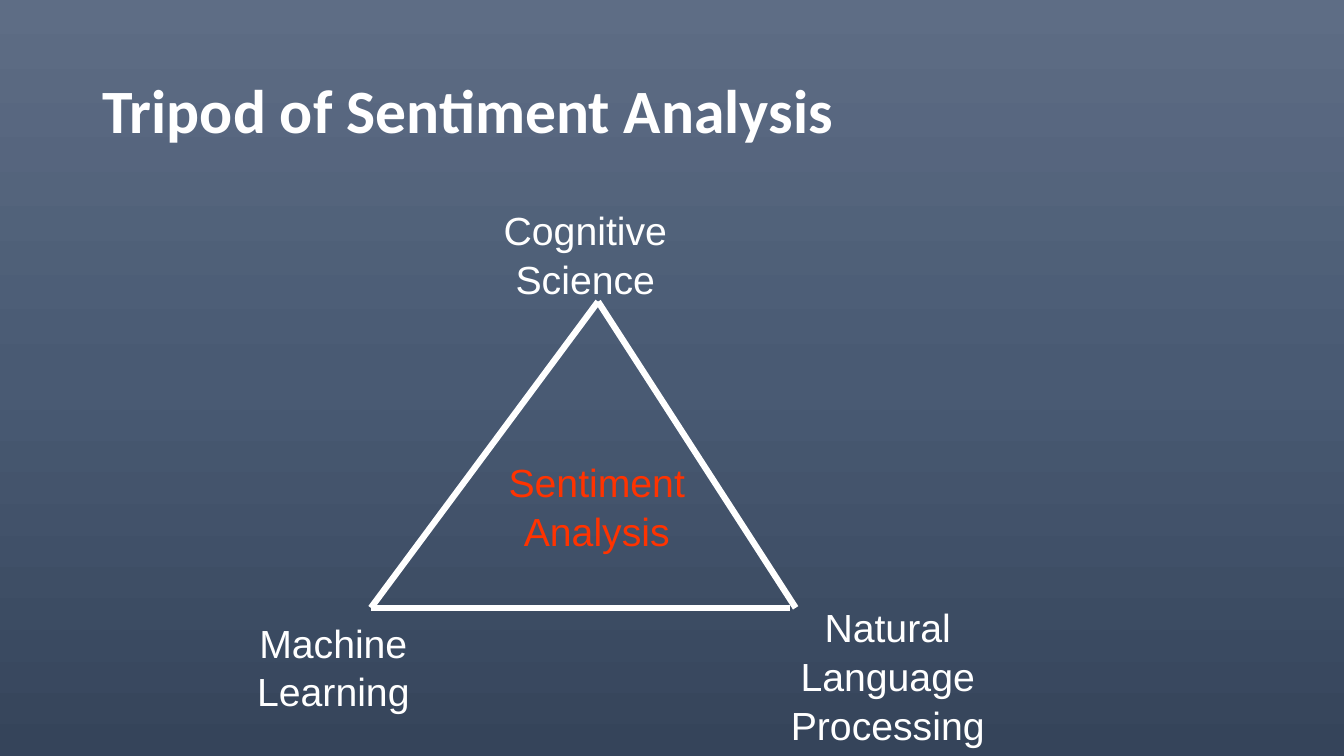
from copy import deepcopy

from pptx import Presentation
from pptx.dml.color import RGBColor
from pptx.enum.shapes import MSO_CONNECTOR
from pptx.enum.text import MSO_ANCHOR, PP_ALIGN
from pptx.oxml.ns import qn
from pptx.util import Inches, Pt
from lxml.etree import SubElement

WIDTH, HEIGHT = 13.33, 7.5
WHITE, RED = "FFFFFF", "FF3300"
BACKGROUND = [(0, "5E6D85"), (0.5, "495A73"), (1, "35445A")]
LABEL_SIZE = (0.226, 0.123)

# Shares of the slide's width and height
LABELS = [
    ("Cognitive Science", 0.3225, 0.264, WHITE),
    ("Natural Language Processing", 0.5475, 0.7895, WHITE),
    ("Machine Learning", 0.135, 0.8095, WHITE),
    ("Sentiment Analysis", 0.331, 0.5975, RED),
]
APEX, LEFT_FOOT, RIGHT_FOOT = (0.445, 0.399), (0.276, 0.804), (0.592, 0.804)
SIDES = [(APEX, RIGHT_FOOT), (LEFT_FOOT, (0.588, 0.804)), (APEX, LEFT_FOOT)]


def color(hex_text):
    return RGBColor.from_string(hex_text)


def apply_format(target, values):
    for name, value in values.items():
        setattr(target, name, value)


class SlideBuilder:
    """Places elements by shares of the slide's width and height."""

    def __init__(self, presentation):
        self.slide = presentation.slides.add_slide(presentation.slide_layouts[6])
        self.shapes = self.slide.shapes
        self.title_font = {"name": "Calibri", "size": Pt(44), "bold": True}
        self.label_font = {"name": "Arial", "size": Pt(28)}

    def point(self, x, y):
        return Inches(x * WIDTH), Inches(y * HEIGHT)

    def background(self, stops):
        fill = self.slide.background.fill
        fill.gradient()
        fill.gradient_angle = 270
        first = fill.gradient_stops[0]._gs
        first.addnext(deepcopy(first))
        for stop, (position, hex_text) in zip(fill.gradient_stops, stops):
            stop.position = position
            stop.color.rgb = color(hex_text)

    def text(self, words, position, size, font, hex_text, frame_format, paragraph_format):
        box = self.shapes.add_textbox(*self.point(*position), *self.point(*size))
        apply_format(box.text_frame, {"word_wrap": True, **frame_format})
        paragraph = box.text_frame.paragraphs[0]
        apply_format(paragraph, paragraph_format)
        run = paragraph.add_run()
        run.text = words
        apply_format(run.font, font)
        run.font.color.rgb = color(hex_text)

    def title(self, words):
        self.text(words, (0.069, 0.053), (0.863, 0.193), self.title_font, WHITE,
                  {"vertical_anchor": MSO_ANCHOR.MIDDLE}, {"line_spacing": 0.9})

    def label(self, words, x, y, hex_text):
        self.text(words, (x, y), LABEL_SIZE, self.label_font, hex_text,
                  {"vertical_anchor": MSO_ANCHOR.TOP},
                  {"alignment": PP_ALIGN.CENTER, "line_spacing": 1.04})

    def side(self, start, end):
        line = self.shapes.add_connector(
            MSO_CONNECTOR.STRAIGHT, *self.point(*start), *self.point(*end))
        line.line.width = Pt(4.5)
        line.line.color.rgb = color(WHITE)
        SubElement(line._element.spPr, qn("a:effectLst"))


def main():
    presentation = Presentation()
    presentation.slide_width = Inches(WIDTH)
    presentation.slide_height = Inches(HEIGHT)
    builder = SlideBuilder(presentation)
    builder.background(BACKGROUND)
    builder.title("Tripod of Sentiment Analysis")
    for start, end in SIDES:
        builder.side(start, end)
    for label in LABELS:
        builder.label(*label)
    presentation.save("out.pptx")


if __name__ == "__main__":
    main()
